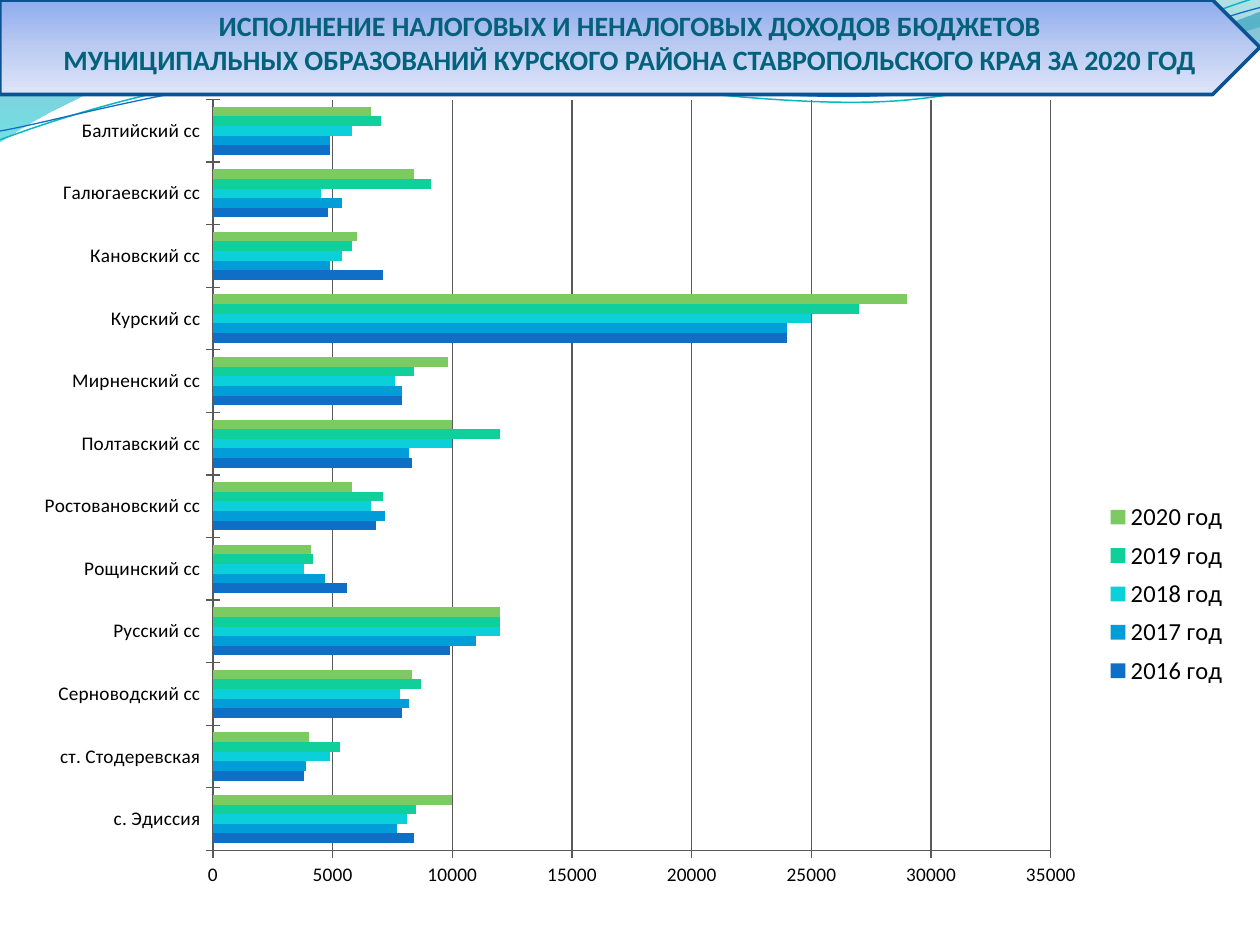
import pptx
import pptx.chart.data
import pptx.dml.color
import pptx.enum.chart
import pptx.enum.shapes
import pptx.enum.text
import pptx.oxml
import pptx.util
from lxml import etree

Inches, Pt = pptx.util.Inches, pptx.util.Pt
tag = pptx.oxml.ns.qn
FONT = "Calibri"
TITLE = ("ИСПОЛНЕНИЕ НАЛОГОВЫХ И НЕНАЛОГОВЫХ ДОХОДОВ БЮДЖЕТОВ\v"
         "МУНИЦИПАЛЬНЫХ ОБРАЗОВАНИЙ КУРСКОГО РАЙОНА СТАВРОПОЛЬСКОГО КРАЯ ЗА 2020 ГОД")
PLACES = ["с. Эдиссия", "ст. Стодеревская", "Серноводский сс", "Русский сс",
          "Рощинский сс", "Ростовановский сс", "Полтавский сс", "Мирненский сс",
          "Курский сс", "Кановский сс", "Галюгаевский сс", "Балтийский сс"]
YEARS = [
    ("2016 год", "0F6FC6", [8400, 3800, 7900, 9900, 5600, 6800, 8300, 7900, 24000, 7100, 4800, 4900]),
    ("2017 год", "009DD9", [7700, 3900, 8200, 11000, 4700, 7200, 8200, 7900, 24000, 4900, 5400, 4900]),
    ("2018 год", "0BD0D9", [8100, 4900, 7800, 12000, 3800, 6600, 10000, 7600, 25000, 5400, 4500, 5800]),
    ("2019 год", "10CF9B", [8500, 5300, 8700, 12000, 4200, 7100, 12000, 8400, 27000, 5800, 9100, 7000]),
    ("2020 год", "7CCA62", [10000, 4000, 8300, 12000, 4100, 5800, 10000, 9800, 29000, 6000, 8400, 6600]),
]
# A pair is a line's end; a six is a curve's two handles and end.
WAVES = [
    ([(0, 0), (4.4, -0.01), (4.76, 0.17, 6.64, 0.63, 7.58, 0.63),
      (8.53, 0.63, 9.58, 0.26, 10, 0.09), (10.01, 0.36),
      (9.83, 0.44, 8.7, 0.76, 7.46, 0.75), (6.22, 0.75, 3.82, 0.28, 2.57, 0.34),
      (1.29, 0.36, 0.46, 0.83, -0.01, 1.13)],
     [(0, "0074A1", 45), (100, "00C6CF", 55)]),
    ([(4.79, -0.01), (5.09, 0.11, 6.82, 0.62, 7.69, 0.65),
      (8.56, 0.69, 9.61, 0.32, 10, 0.21), (10, 0)],
     [(0, "00A1A9", 30), (80, "008BBF", 45)]),
]
CURVES = [
    ([(0, 1.11), (0.48, 0.93, 1.58, 0.57, 2.77, 0.52), (3.95, 0.47, 5.93, 0.89, 7.13, 0.8),
      (8.33, 0.71, 9.38, 0.15, 9.98, -0.02)], "0AB8BF", 0.85),
    ([(0, 1.04), (0.47, 0.96, 1.64, 0.61, 2.83, 0.56), (4.03, 0.51, 5.97, 0.84, 7.17, 0.75),
      (8.36, 0.67, 9.41, 0.21, 10, 0.06)], "0F6FC6", 0.75),
]
BANNER = [(0, "8EABEE", 100), (50, "BBCBF2", 100), (100, "DEE5F8", 100)]
CHART = (0.17, 0.67, 9.67, 6.5)
PLOT = (1.69, 0.79, 6.65, 5.96)
LEGEND = (8.73, 3.92, 1.06, 1.59)


def rgb(code):
    return pptx.dml.color.RGBColor.from_string(code)


def draw(path, close):
    """Lay all points as lines, then join each handle pair and end into a curve."""
    pts = [(part[i] * 100, part[i + 1] * 100)
           for part in path for i in range(0, len(part), 2)]
    form = slide.shapes.build_freeform(*pts[0], scale=Inches(0.01))
    form.add_line_segments(pts[1:], close=close)
    shape = form.convert_to_shape()
    shape.shadow.inherit = False
    lines = iter(shape._element.findall(".//" + tag("a:lnTo")))
    for part in path[1:]:
        first = next(lines)
        if len(part) == 6:
            first.tag = tag("a:cubicBezTo")
            for more in (next(lines), next(lines)):
                first.append(more[0])
                more.getparent().remove(more)
    return shape


def shade(shape, stops):
    """Fill from top to bottom; a stop is place, colour and opacity in percent."""
    shape.fill.gradient()
    shape.fill.gradient_angle = 270
    group = shape._element.spPr.find(".//" + tag("a:gsLst"))
    for old in list(group):
        group.remove(old)
    for pos, code, seen in stops:
        stop = etree.SubElement(group, tag("a:gs"), pos=str(pos * 1000))
        tint = etree.SubElement(stop, tag("a:srgbClr"), val=code)
        if seen < 100:
            etree.SubElement(tint, tag("a:alpha"), val=str(seen * 1000))


def edge(line, code, width):
    line.color.rgb = rgb(code)
    line.width = Pt(width)


def place(owner, box, inner=False):
    """Fix a chart part's place, given in inches on the slide."""
    node = owner.find(tag("c:layout"))
    if node is None:
        node = etree.Element(tag("c:layout"))
        if inner:
            owner.insert(0, node)
        else:
            owner.find(tag("c:legendPos")).addnext(node)
    fixed = etree.SubElement(node, tag("c:manualLayout"))
    if inner:
        etree.SubElement(fixed, tag("c:layoutTarget"), val="inner")
    for name in ("xMode", "yMode"):
        etree.SubElement(fixed, tag("c:" + name), val="edge")
    left, top, wide, high = CHART
    shares = ((box[0] - left) / wide, (box[1] - top) / high, box[2] / wide, box[3] / high)
    for name, share in zip("xywh", shares):
        etree.SubElement(fixed, tag("c:" + name), val=f"{share:.4f}")


deck = pptx.Presentation()
deck.slide_width, deck.slide_height = Inches(10), Inches(7.5)
slide = deck.slides.add_slide(deck.slide_layouts[6])

for path, stops in WAVES:
    wave = draw(path, True)
    shade(wave, stops)
    wave.line.fill.background()
for path, code, width in CURVES:
    curve = draw(path, False)
    curve.fill.background()
    edge(curve.line, code, width)

banner = slide.shapes.add_shape(pptx.enum.shapes.MSO_SHAPE.PENTAGON,
                                0, 0, Inches(10), Inches(0.75))
banner.shadow.inherit = False
shade(banner, BANNER)
edge(banner.line, "0B5292", 2)

title = slide.shapes.add_textbox(0, 0, Inches(10), Inches(0.67)).text_frame
title.word_wrap = True
title.vertical_anchor = pptx.enum.text.MSO_ANCHOR.MIDDLE
title.text = TITLE
para = title.paragraphs[0]
para.alignment = pptx.enum.text.PP_ALIGN.CENTER
para.font.name, para.font.size, para.font.bold = FONT, Pt(16), True
para.font.color.rgb = rgb("04617B")

data = pptx.chart.data.CategoryChartData()
data.categories = PLACES
for name, code, vals in YEARS:
    data.add_series(name, vals)
chart = slide.shapes.add_chart(pptx.enum.chart.XL_CHART_TYPE.BAR_CLUSTERED,
                               *map(Inches, CHART), data).chart
chart.has_title = False
chart.font.name, chart.font.size = FONT, Pt(11)
chart.font.color.rgb = rgb("000000")

plot = chart.plots[0]
plot.gap_width, plot.overlap, plot.vary_by_categories = 150, 0, False
for bars, (name, code, vals) in zip(plot.series, YEARS):
    bars.format.fill.solid()
    bars.format.fill.fore_color.rgb = rgb(code)

values = chart.value_axis
for axis in (chart.category_axis, values):
    axis.major_tick_mark = pptx.enum.chart.XL_TICK_MARK.CROSS
    edge(axis.format.line, "595959", 0.75)
values.minimum_scale, values.maximum_scale, values.major_unit = 0, 35000, 5000
values.has_major_gridlines = True
edge(values.major_gridlines.format.line, "595959", 0.75)
values.tick_labels.number_format = "General"
values.tick_labels.number_format_is_linked = False

chart.has_legend = True
legend = chart.legend
legend.position = pptx.enum.chart.XL_LEGEND_POSITION.RIGHT
legend.include_in_layout = False
legend.font.name, legend.font.size = FONT, Pt(14)
legend.font.color.rgb = rgb("000000")
place(chart._chartSpace.chart.plotArea, PLOT, inner=True)
place(legend._element, LEGEND)

deck.save("out.pptx")
